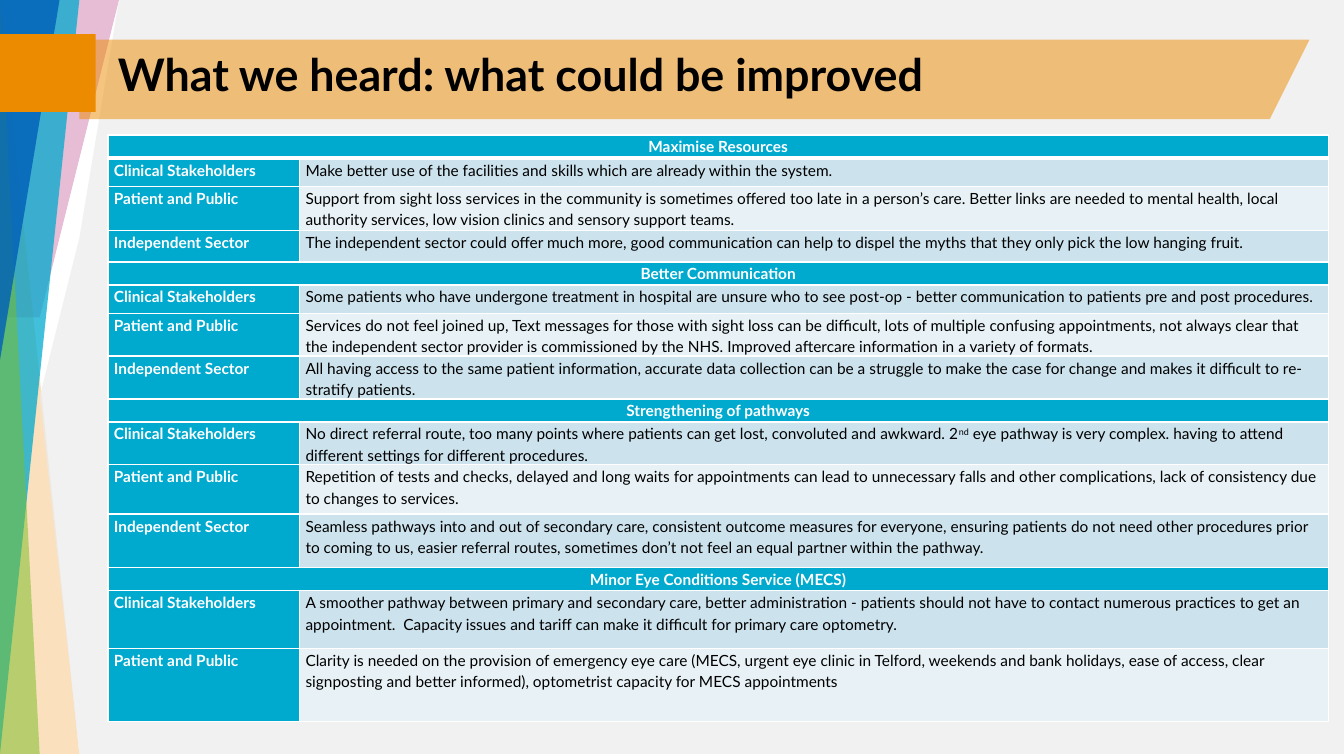
from pptx import Presentation
from pptx.dml.color import RGBColor
from pptx.enum.shapes import MSO_SHAPE as Preset
from pptx.enum.text import MSO_ANCHOR as Anchor, PP_ALIGN as Align
from pptx.oxml.ns import qn
from pptx.util import Cm, Pt
from lxml.etree import SubElement

FONT = "Lato"
WIDTH, HEIGHT = 33.87, 19.05
WHITE, BLACK = "FFFFFF", "000000"
CYAN, ORANGE, PALE, PALEST = "00A9CE", "ED8B00", "CCE2ED", "E7F1F6"
CLINICAL, PUBLIC, INDEPENDENT = "Clinical Stakeholders", "Patient and Public", "Independent Sector"
THEME_HEIGHT = 0.58

THEMES = [
    ("Maximise Resources", [
        (CLINICAL, 0.71, "Make better use of the facilities and skills which are already within the system."),
        (PUBLIC, 1.12, "Support from sight loss services in the community is sometimes offered too late in a "
         "person’s care. Better links are needed to mental health, local authority services, low vision "
         "clinics and sensory support teams."),
        (INDEPENDENT, 0.79, "The independent sector could offer much more, good communication can help to "
         "dispel the myths that they only pick the low hanging fruit."),
    ]),
    ("Better Communication", [
        (CLINICAL, 0.71, "Some patients who have undergone treatment in hospital are unsure who to see "
         "post-op - better communication to patients pre and post procedures."),
        (PUBLIC, 1.04, "Services do not feel joined up, Text messages for those with sight loss can be "
         "difficult, lots of multiple confusing appointments, not always clear that the independent sector "
         "provider is commissioned by the NHS. Improved aftercare information in a variety of formats."),
        (INDEPENDENT, 0.71, "All having access to the same patient information, accurate data collection can "
         "be a struggle to make the case for change and makes it difficult to re-stratify patients."),
    ]),
    ("Strengthening of pathways", [
        (CLINICAL, 0.94, "No direct referral route, too many points where patients can get lost, convoluted "
         "and awkward. 2^nd^ eye pathway is very complex. having to attend different settings for different "
         "procedures."),
        (PUBLIC, 1.24, "Repetition of tests and checks, delayed and long waits for appointments can lead to "
         "unnecessary falls and other complications, lack of consistency due to changes to services."),
        (INDEPENDENT, 1.35, "Seamless pathways into and out of secondary care, consistent outcome measures "
         "for everyone, ensuring patients do not need other procedures prior to coming to us, easier referral "
         "routes, sometimes don’t not feel an equal partner within the pathway."),
    ]),
    ("Minor Eye Conditions Service (MECS)", [
        (CLINICAL, 1.45, "A smoother pathway between primary and secondary care, better administration - "
         "patients should not have to contact numerous practices to get an appointment.  Capacity issues "
         "and tariff can make it difficult for primary care optometry."),
        (PUBLIC, 1.85, "Clarity is needed on the provision of emergency eye care (MECS, urgent eye clinic in "
         "Telford, weekends and bank holidays, ease of access, clear signposting and better informed), "
         "optometrist capacity for MECS appointments"),
    ]),
]


def color(hex_code):
    return RGBColor.from_string(hex_code)


def paint(shape, hex_code, opacity=100):
    shape.shadow.inherit = False
    shape.line.fill.background()
    shape.fill.solid()
    shape.fill.fore_color.rgb = color(hex_code)
    if opacity < 100:
        tint = shape.fill._xPr.find(".//" + qn("a:srgbClr"))
        SubElement(tint, qn("a:alpha"), val=str(opacity * 1000))


def add_facet(slide, points, hex_code, opacity):
    outline = slide.shapes.build_freeform(*points[0], scale=Cm(1))
    outline.add_line_segments(points[1:], close=True)
    paint(outline.convert_to_shape(), hex_code, opacity)


def add_preset(slide, preset, box, adjustment, hex_code, opacity=100, rotation=0):
    shape = slide.shapes.add_shape(preset, *map(Cm, box))
    shape.adjustments[0] = adjustment
    shape.rotation = rotation
    paint(shape, hex_code, opacity)


def set_font(paragraph, size, hex_code, bold):
    font = paragraph.font
    font.name, font.size, font.bold = FONT, Pt(size), bold
    font.color.rgb = color(hex_code)


def add_title(slide, text):
    frame = slide.shapes.add_textbox(Cm(2.72), Cm(0.89), Cm(30.33), Cm(1.9)).text_frame
    frame.word_wrap = True
    frame.vertical_anchor = Anchor.TOP
    frame.margin_top = Cm(0.3)
    heading = frame.paragraphs[0]
    heading.text = text
    set_font(heading, 32, BLACK, True)


def set_borders(cell, bottom=1):
    properties = cell._tc.get_or_add_tcPr()
    for side, width in (("L", 1), ("R", 1), ("T", 1), ("B", bottom)):
        line = SubElement(properties, qn(f"a:ln{side}"), w=str(Pt(width)))
        SubElement(SubElement(line, qn("a:solidFill")), qn("a:srgbClr"), val=WHITE)


def style_cell(cell, hex_code, bottom=1):
    set_borders(cell, bottom)
    cell.fill.solid()
    cell.fill.fore_color.rgb = color(hex_code)
    cell.margin_left = cell.margin_right = Cm(0.15)
    cell.margin_top = cell.margin_bottom = 0


def fill_cell(cell, text, hex_code, text_color=WHITE, bold=True):
    style_cell(cell, hex_code)
    paragraph = cell.text_frame.paragraphs[0]
    paragraph.line_spacing = 1.15
    paragraph.space_after = Pt(10)
    set_font(paragraph, 11, text_color, bold)
    for index, part in enumerate(text.split("^")):
        run = paragraph.add_run()
        run.text = part
        if index % 2:
            run._r.get_or_add_rPr().set("baseline", "30000")


def fill_theme(row, theme, bottom):
    name_cell, spanned_cell = row.cells
    name_cell.merge(spanned_cell)
    for cell in (name_cell, spanned_cell):
        style_cell(cell, CYAN, bottom)
    paragraph = name_cell.text_frame.paragraphs[0]
    paragraph.text = theme
    paragraph.alignment = Align.CENTER
    paragraph.line_spacing = 1.15
    paragraph.space_after = Pt(6)
    set_font(paragraph, 11, WHITE, True)


def add_feedback_table(slide):
    heights = [h for _, comments in THEMES for h in [THEME_HEIGHT, *(c[1] for c in comments)]]
    table = slide.shapes.add_table(len(heights), 2, Cm(2.72), Cm(3.4), Cm(30.76), Cm(sum(heights))).table
    table.first_row = table.horz_banding = False
    table.columns[0].width, table.columns[1].width = Cm(4.83), Cm(25.93)
    for row, height in zip(table.rows, heights):
        row.height = Cm(height)
    rows = iter(table.rows)
    for index, (theme, comments) in enumerate(THEMES):
        fill_theme(next(rows), theme, 1 if index else 3)
        for group, _, comment in comments:
            group_cell, comment_cell = next(rows).cells
            fill_cell(group_cell, group, CYAN)
            fill_cell(comment_cell, comment, PALEST if group == PUBLIC else PALE, BLACK, False)


def add_backdrop(slide):
    add_facet(slide, [(1.04, 7.9), (0, 7.9), (0, 0), (3.28, 0)], "AE2573", 30)
    for top, bottom, hex_code, opacity in (
        (0.3, 2.18, ORANGE, 26), (2.18, 0.46, CYAN, 74), (0.13, 1.19, "78BE20", 50),
    ):
        add_facet(slide, [(bottom, HEIGHT), (0, HEIGHT), (0, 0), (top, 0)], hex_code, opacity)
    add_preset(slide, Preset.ISOSCELES_TRIANGLE, (0, 0, 1.5, 9.07), 1, "005EB8", 80, 180)
    add_facet(slide, [(WIDTH, HEIGHT), (WIDTH, 0), (3.25, -0.05), (1.65, 5.69), (1.24, 9.93),
                      (2.18, 19.13)], "EBEBEB", 69)
    add_facet(slide, [(2.36, 0.86), (32.56, 0.86), (31.67, 2.84), (2.36, 2.79)], ORANGE, 50)
    add_preset(slide, Preset.PENTAGON, (0, 0.86, 2.41, 1.96), 0, ORANGE)


def main():
    deck = Presentation()
    deck.slide_width, deck.slide_height = Cm(WIDTH), Cm(HEIGHT)
    slide = deck.slides.add_slide(deck.slide_layouts[6])
    add_backdrop(slide)
    add_feedback_table(slide)
    add_title(slide, "What we heard: what could be improved")
    deck.save("out.pptx")


if __name__ == "__main__":
    main()
